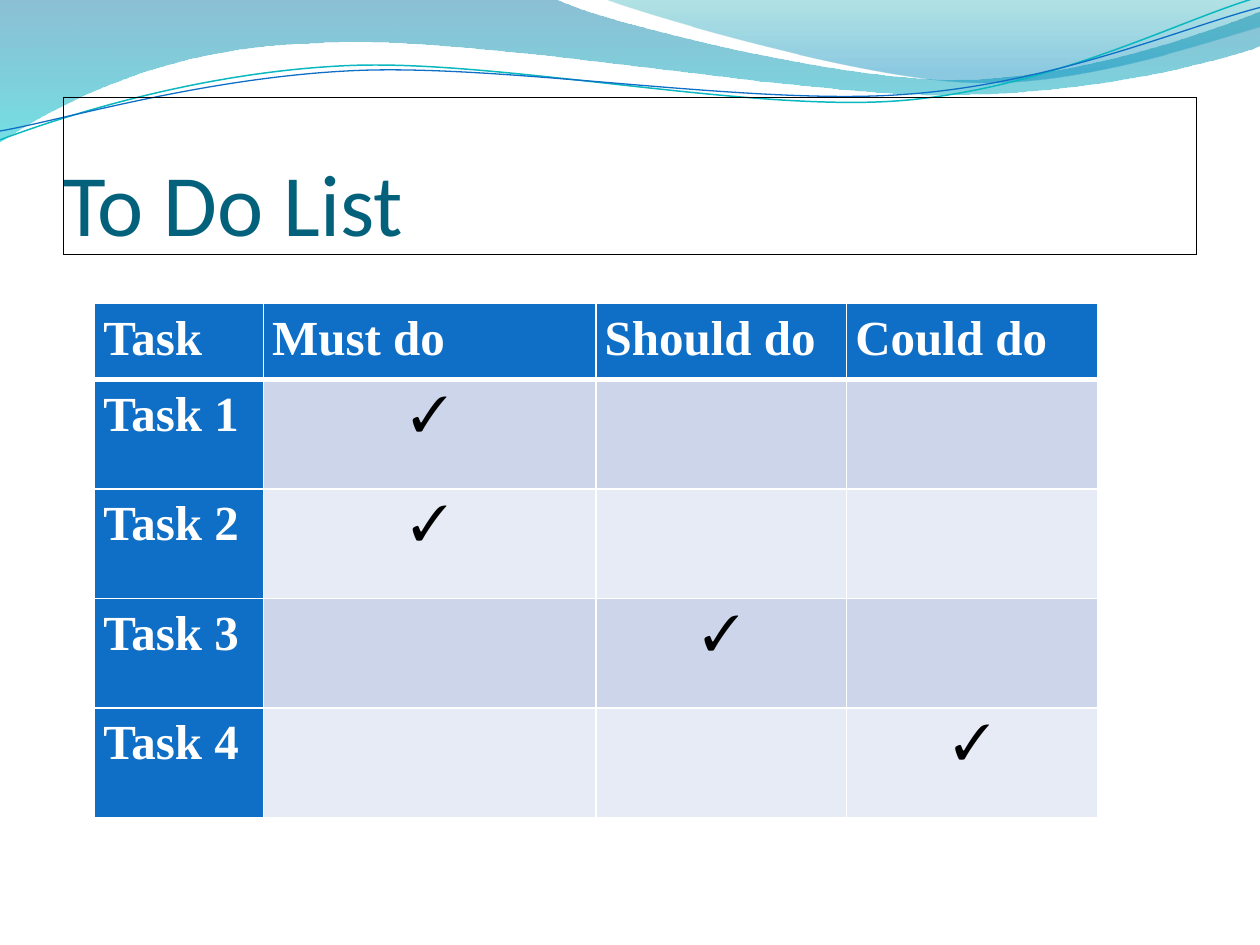
from math import cos, radians, sin

from lxml.etree import SubElement as Sub
from pptx import Presentation
from pptx.dml.color import RGBColor as RGB
from pptx.enum.text import MSO_ANCHOR as Anchor, MSO_AUTO_SIZE as Fit, PP_ALIGN as Align
from pptx.oxml.ns import qn
from pptx.util import Inches, Pt

WHITE, BLACK = RGB(255, 255, 255), RGB(0, 0, 0)
BLUE, AQUA, TEAL = RGB(0x0F, 0x6F, 0xC6), RGB(0x0A, 0xB8, 0xBF), RGB(0x04, 0x61, 0x7B)
BANDS = [RGB(0xCC, 0xD5, 0xEA), RGB(0xE7, 0xEB, 0xF5)]

# Each path: a start point, then lines (x, y) and curves (three points)
# Each gradient stop: position, colour, opacity in percent
AREAS = [
    ([(0, 0), (4.4, -0.01), (4.76, 0.17, 6.64, 0.63, 7.58, 0.63),
      (8.53, 0.63, 9.58, 0.26, 10, 0.09), (10.01, 0.36),
      (9.83, 0.44, 8.7, 0.76, 7.46, 0.75), (6.22, 0.75, 3.82, 0.28, 2.57, 0.34),
      (1.29, 0.36, 0.46, 0.83, -0.01, 1.13), (0, 0)],
     [(0, RGB(0, 0x74, 0xA1), 45), (1, RGB(0, 0xC6, 0xCF), 55)]),
    ([(4.79, -0.01), (5.09, 0.11, 6.82, 0.62, 7.69, 0.65),
      (8.56, 0.69, 9.61, 0.32, 10, 0.21), (10, 0), (4.79, -0.01)],
     [(0, RGB(0, 0xA1, 0xA9), 30), (0.8, RGB(0, 0x8B, 0xBF), 45)]),
]
# Each line: path, centre of turn, colour, width
LINES = [
    ([(0, 1.11), (0.48, 0.93, 1.58, 0.57, 2.77, 0.52),
      (3.95, 0.47, 5.93, 0.89, 7.13, 0.8), (8.33, 0.71, 9.38, 0.15, 9.98, -0.02)],
     (4.99, 0.58), AQUA, 0.85),
    ([(0, 1.04), (0.47, 0.96, 1.64, 0.61, 2.83, 0.56),
      (4.03, 0.51, 5.97, 0.84, 7.17, 0.75), (8.36, 0.67, 9.41, 0.21, 10, 0.06)],
     (5, 0.59), BLUE, 0.75),
]
TILT = 357.3

HEADS = ["Task", "Must do", "Should do", "Could do"]
TICKS = [1, 1, 2, 3]  # ticked column of each task
COLS = [1.34, 2.64, 1.99, 1.99]
ROWS = [0.6] + [0.87] * len(TICKS)


def put(obj, **vals):
    for name, val in vals.items():
        setattr(obj, name, val)


def turn(path, mid, angle):
    """Turn every point of a path about a centre."""
    c, s = cos(radians(angle)), sin(radians(angle))
    out = []
    for seg in path:
        spot = []
        for x, y in zip(seg[::2], seg[1::2]):
            dx, dy = x - mid[0], y - mid[1]
            spot += [mid[0] + dx * c - dy * s, mid[1] + dx * s + dy * c]
        out.append(tuple(spot))
    return out


def add_path(slide, path, close):
    pts = [(Inches(x), Inches(y)) for seg in path for x, y in zip(seg[::2], seg[1::2])]
    pen = slide.shapes.build_freeform(*pts[0])
    pen.add_line_segments(pts[1:], close=close)
    shape = pen.convert_to_shape()
    shape.shadow.inherit = False
    # Join each three points of a curve into one Bezier step
    steps = iter(list(shape.element.iter(qn("a:lnTo"))))
    for seg in path[1:]:
        first = next(steps)
        if len(seg) == 6:
            first.tag = qn("a:cubicBezTo")
            for _ in range(2):
                step = next(steps)
                first.append(step[0])
                step.getparent().remove(step)
    return shape


def add_area(slide, path, stops):
    shape = add_path(slide, path, True)
    shape.line.fill.background()
    shape.fill.gradient()
    shape.fill.gradient_angle = 270
    for stop, (pos, color, _) in zip(shape.fill.gradient_stops, stops):
        stop.position = pos
        stop.color.rgb = color
    tints = shape.element.spPr.iter(qn("a:srgbClr"))
    for tint, (_, _, alpha) in zip(tints, stops):
        Sub(tint, qn("a:alpha"), val=str(alpha * 1000))


def add_line(slide, path, mid, color, width):
    shape = add_path(slide, turn(path, mid, -TILT), False)
    shape.rotation = TILT
    shape.fill.background()
    shape.line.color.rgb = color
    shape.line.width = Pt(width)


def set_title(slide, text):
    title = slide.shapes.title
    slide.shapes.element.append(title.element)  # in front of the waves
    put(title, left=Inches(0.5), top=Inches(0.77), width=Inches(9), height=Inches(1.25))
    title.line.color.rgb = BLACK
    frame = title.text_frame
    frame.text = text
    put(frame, auto_size=Fit.NONE, vertical_anchor=Anchor.BOTTOM, margin_left=0,
        margin_top=Inches(0.05), margin_right=0, margin_bottom=0)
    para = frame.paragraphs[0]
    para.alignment = Align.LEFT
    put(para.runs[0].font, name="Calibri", size=Pt(50))
    para.runs[0].font.color.rgb = TEAL


def set_edges(cell, **widths):
    props = cell._tc.get_or_add_tcPr()
    for side in "LRTB":
        edge = Sub(props, qn("a:ln" + side), w=str(Pt(widths.get(side, 1))))
        fill = Sub(edge, qn("a:solidFill"))
        Sub(fill, qn("a:srgbClr"), val=str(WHITE))


def set_text(cell, text, color, bold, align):
    put(cell, margin_left=Inches(0.07), margin_right=Inches(0.07),
        margin_top=0, margin_bottom=0)
    para = cell.text_frame.paragraphs[0]
    put(para, alignment=align, line_spacing=1.15, space_after=Pt(10))
    run = para.add_run()
    run.text = text
    put(run.font, name="Times New Roman", size=Pt(28), bold=bold)
    run.font.color.rgb = color


def add_tasks(slide):
    frame = slide.shapes.add_table(
        len(ROWS), len(COLS), Inches(0.75), Inches(2.41), Inches(7.95), Inches(4.53))
    table = frame.table
    table.first_col = True
    for col, width in zip(table.columns, COLS):
        col.width = Inches(width)
    for r, height in enumerate(ROWS):
        table.rows[r].height = Inches(height)
        for c, head in enumerate(HEADS):
            cell = table.cell(r, c)
            set_edges(cell, **({0: {"B": 3}, 1: {"T": 3}}.get(r, {})))
            label = r == 0 or c == 0
            cell.fill.solid()
            cell.fill.fore_color.rgb = BLUE if label else BANDS[(r - 1) % 2]
            if label:
                set_text(cell, f"Task {r}" if r else head, WHITE, True, Align.LEFT)
            elif TICKS[r - 1] == c:
                set_text(cell, "✓", BLACK, False, Align.CENTER)
    put(frame, width=Inches(7.95), height=Inches(4.53))


def main():
    deck = Presentation()
    put(deck, slide_width=Inches(10), slide_height=Inches(7.5))
    slide = deck.slides.add_slide(deck.slide_layouts[5])
    # Waves along the top
    for area in AREAS:
        add_area(slide, *area)
    for line in LINES:
        add_line(slide, *line)
    # Title and task table
    set_title(slide, "To Do List")
    add_tasks(slide)
    deck.save("out.pptx")


if __name__ == "__main__":
    main()
